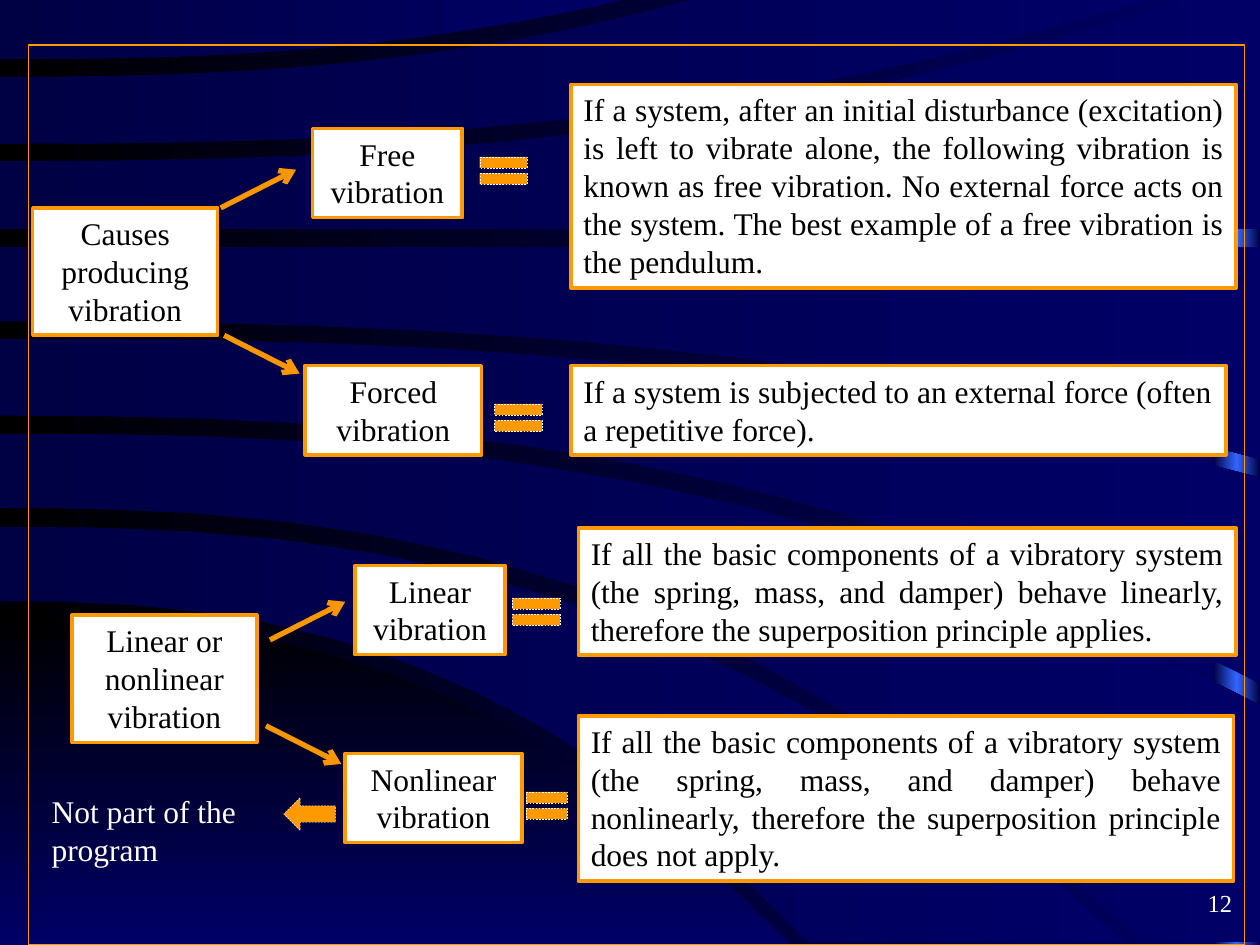
from dataclasses import dataclass
from typing import Any, Optional

import lxml.etree
import pptx
import pptx.dml.color
import pptx.enum.dml
import pptx.enum.shapes
import pptx.enum.text
import pptx.oxml.ns
import pptx.util

Cm = pptx.util.Cm
Pt = pptx.util.Pt
qn = pptx.oxml.ns.qn
Preset = pptx.enum.shapes.MSO_SHAPE
Align = pptx.enum.text.PP_ALIGN

ORANGE, ARROW, WHITE, BLACK = "FF9900", "F99600", "FFFFFF", "000000"
NIGHT, NAVY, BLUE = "000044", "000066", "3366FF"

# Everything is measured in cm
WIDTH, HEIGHT = 25.4, 19.05
TOP, BOTTOM = -0.05, 19.0  # where the background curves leave the slide
CURVE_STEPS, CURVE_POWER = 12, 2.5
ARROW_RUN, ARROW_RISE = 1.52, 0.77

Point = tuple[float, float]
Size = tuple[float, float]
TOPIC, UPPER_KIND, LOWER_KIND = (3.73, 2.57), (3.02, 1.8), (3.56, 1.8)
EQUALS, SMALL_EQUALS = (1.3, 0.94), (1.12, 0.94)


@dataclass
class TextBlock:
    text: str
    corner: Point
    size: Size
    align: Align = Align.CENTER


@dataclass
class Classification:
    boxes: list[TextBlock]
    rising_arrow: Point
    falling_arrow: Point
    equals: list[tuple[Point, Size]]


@dataclass
class Edge:
    """A curve that starts level at the left side and bends away to its end."""
    start: float
    end: Point

    def points(self) -> list[Point]:
        end_x, end_y = self.end
        shares = [step / CURVE_STEPS for step in range(CURVE_STEPS + 1)]
        return [(share * end_x, self.start + (end_y - self.start) * share ** CURVE_POWER)
                for share in shares]


def level(height: float, end: float = WIDTH) -> Edge:
    return Edge(height, (end, height))


BANDS = [
    (Edge(12.47, (15.95, HEIGHT)), level(HEIGHT, 15.95)),
    (Edge(10.62, (22.68, BOTTOM)), Edge(12.12, (16.31, BOTTOM))),
    (Edge(8.74, (WIDTH, 14.22)), Edge(10.24, (23.09, BOTTOM))),
    (Edge(6.83, (WIDTH, 9.63)), Edge(8.38, (WIDTH, 13.77))),
    (level(4.98), Edge(6.48, (WIDTH, 9.25))),
    (Edge(3.25, (23.95, TOP)), level(4.62)),
    (Edge(1.55, (14.12, TOP)), Edge(2.9, (23.29, TOP))),
    (level(TOP, 12.73), Edge(1.19, (12.73, TOP))),
]

COMPONENTS = "If all the basic components of a vibratory system (the spring, mass, and damper) behave "

CAUSES = Classification(
    boxes=[
        TextBlock("Causes producing vibration", (0.66, 4.19), TOPIC),
        TextBlock("Free vibration", (6.3, 2.59), UPPER_KIND),
        TextBlock("Forced vibration", (6.15, 7.37), LOWER_KIND),
        TextBlock("If a system, after an initial disturbance (excitation) is left to vibrate alone, "
                  "the following vibration is known as free vibration. No external force acts on "
                  "the system. The best example of a free vibration is the pendulum.",
                  (11.51, 1.7), (13.41, 4.11), Align.JUSTIFY),
        TextBlock("If a system is subjected to an external force (often a repetitive force).",
                  (11.51, 7.37), (13.21, 1.8), Align.LEFT),
    ],
    rising_arrow=(4.45, 4.19),
    falling_arrow=(4.52, 6.76),
    equals=[((9.5, 2.97), EQUALS), ((9.8, 7.95), EQUALS)],
)
LINEARITY = Classification(
    boxes=[
        TextBlock("Linear or nonlinear vibration", (1.45, 12.4), TOPIC),
        TextBlock("Linear vibration", (7.16, 11.4), UPPER_KIND),
        TextBlock("Nonlinear vibration", (6.96, 15.19), LOWER_KIND),
        TextBlock(COMPONENTS + "linearly, therefore the superposition principle applies.",
                  (11.66, 10.64), (13.26, 2.57), Align.JUSTIFY),
        TextBlock(COMPONENTS + "nonlinearly, therefore the superposition principle does not apply.",
                  (11.66, 14.43), (13.21, 3.33), Align.JUSTIFY),
    ],
    rising_arrow=(5.44, 12.9),
    falling_arrow=(5.36, 14.63),
    equals=[((10.16, 11.86), EQUALS), ((10.46, 15.77), SMALL_EQUALS)],
)
NOTE = TextBlock("Not part of the program", (0.79, 15.85), (5.08, 1.8), Align.LEFT)
PAGE_NUMBER = TextBlock("12", (23.9, 17.78), (1.19, 1.27), Align.RIGHT)


def rgb(color: str) -> pptx.dml.color.RGBColor:
    return pptx.dml.color.RGBColor.from_string(color)


def lengths(*values: float) -> list[int]:
    return [Cm(value) for value in values]


def set_gradient(fill: Any, owner: Any, colors: tuple[str, ...], angle: int = 0) -> None:
    """Give the fill evenly spaced stops; the angle runs clockwise from left to right."""
    fill.gradient()
    gradient = owner.find(".//" + qn("a:gradFill"))
    gradient.find(qn("a:lin")).set("ang", str(angle * 60000))
    stops = gradient.find(qn("a:gsLst"))
    for stop in list(stops):
        stops.remove(stop)
    for index, color in enumerate(colors):
        position = str(index * 100000 // (len(colors) - 1))
        stop = lxml.etree.SubElement(stops, qn("a:gs"), pos=position)
        lxml.etree.SubElement(stop, qn("a:srgbClr"), val=color)


def add_band(shapes: Any, upper: Edge, lower: Edge) -> Any:
    """Fill the area between two edges, squared off at the right."""
    shorter = min(upper.end, lower.end)
    corner = (max(upper.end[0], lower.end[0]), shorter[1])
    outline = [lengths(*point) for point in [*upper.points(), corner, *reversed(lower.points())]]
    builder = shapes.build_freeform(*outline[0])
    builder.add_line_segments(outline[1:], close=True)
    shape = builder.convert_to_shape()
    shape.shadow.inherit = False
    shape.line.fill.background()
    return shape


def add_preset(shapes: Any, preset: Preset, corner: Point, size: Size,
               fill: Optional[str], line: str, width: float) -> Any:
    shape = shapes.add_shape(preset, *lengths(*corner, *size))
    shape.shadow.inherit = False
    if fill is None:
        shape.fill.background()
    else:
        shape.fill.solid()
        shape.fill.fore_color.rgb = rgb(fill)
    shape.line.color.rgb = rgb(line)
    shape.line.width = Pt(width)
    return shape


def add_symbol(shapes: Any, preset: Preset, corner: Point, size: Size) -> Any:
    """An orange sign with a fine dashed white outline."""
    symbol = add_preset(shapes, preset, corner, size, ORANGE, WHITE, 0.25)
    symbol.line.dash_style = pptx.enum.dml.MSO_LINE.DASH
    return symbol


def write(shape: Any, block: TextBlock, color: str, size: int = 18) -> None:
    shape.text_frame.word_wrap = True
    shape.text_frame.vertical_anchor = pptx.enum.text.MSO_ANCHOR.TOP
    paragraph = shape.text_frame.paragraphs[0]
    paragraph.text = block.text
    paragraph.alignment = block.align
    font = paragraph.runs[0].font
    for name, value in {"name": "Times New Roman", "size": Pt(size)}.items():
        setattr(font, name, value)
    font.color.rgb = rgb(color)


def add_label(shapes: Any, block: TextBlock, size: int = 18) -> None:
    write(shapes.add_textbox(*lengths(*block.corner, *block.size)), block, WHITE, size)


def add_arrow(shapes: Any, start: Point, drop: float) -> None:
    x, y = start
    arrow = shapes.add_connector(pptx.enum.shapes.MSO_CONNECTOR.STRAIGHT,
                                 *lengths(x, y, x + ARROW_RUN, y + drop))
    arrow.line.color.rgb = rgb(ARROW)
    arrow.line.width = Pt(3)
    properties = arrow._element.spPr
    lxml.etree.SubElement(properties.find(qn("a:ln")), qn("a:tailEnd"), type="arrow")
    lxml.etree.SubElement(properties, qn("a:effectLst"))


def add_classification(slide: Any, classification: Classification) -> Any:
    shapes = slide.shapes.add_group_shape().shapes
    for block in classification.boxes:
        box = add_preset(shapes, Preset.RECTANGLE, block.corner, block.size, WHITE, ORANGE, 2)
        write(box, block, BLACK)
    add_arrow(shapes, classification.rising_arrow, -ARROW_RISE)
    add_arrow(shapes, classification.falling_arrow, ARROW_RISE)
    for corner, size in classification.equals:
        add_symbol(shapes, Preset.MATH_EQUAL, corner, size)
    return shapes


presentation = pptx.Presentation()
presentation.slide_width, presentation.slide_height = lengths(WIDTH, HEIGHT)
slide = presentation.slides.add_slide(presentation.slide_layouts[6])
set_gradient(slide.background.fill, slide._element, (BLACK, NAVY))
strip = add_preset(slide.shapes, Preset.RECTANGLE, (24.46, 0), (0.94, HEIGHT), None, BLUE, 0)
strip.line.fill.background()
set_gradient(strip.fill, strip._element, (NIGHT, BLUE, NIGHT))
for index, (upper, lower) in enumerate(BANDS):
    band = add_band(slide.shapes, upper, lower)
    colors, angle = ((NIGHT, NAVY), 0) if index else ((BLACK, NAVY), 90)
    set_gradient(band.fill, band._element, colors, angle)
add_preset(slide.shapes, Preset.RECTANGLE, (0.58, 0.91), (24.51, 18.14), None, ORANGE, 0.75)
add_label(slide.shapes, PAGE_NUMBER, 14)
add_classification(slide, CAUSES)
linearity = add_classification(slide, LINEARITY)
add_label(linearity, NOTE)
add_symbol(linearity, Preset.RIGHT_ARROW, (5.72, 16.08), (1.04, 0.66)).rotation = 180
presentation.save("out.pptx")
